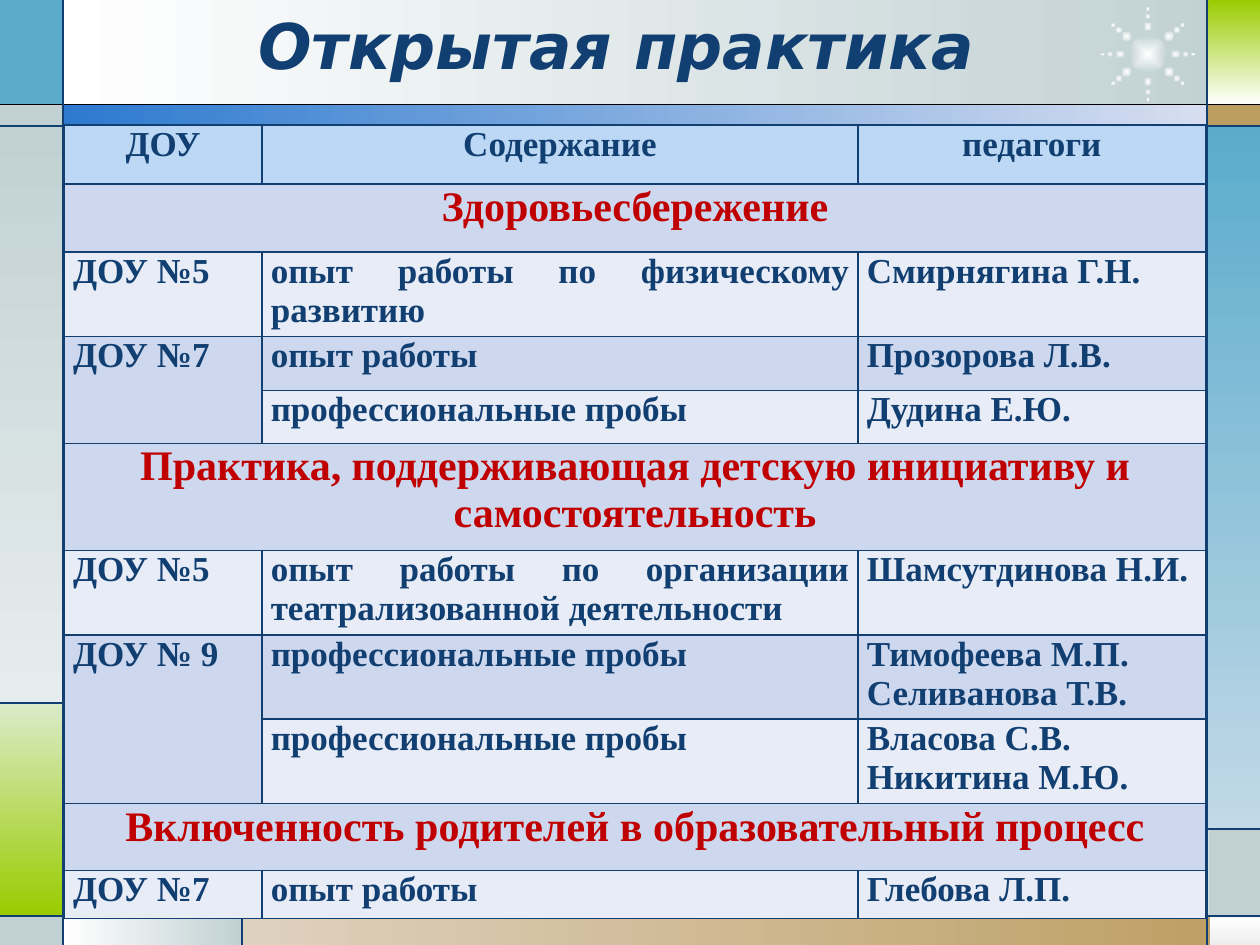
from dataclasses import dataclass
from math import cos, radians, sin
from typing import Optional

from lxml import etree
from pptx import Presentation
from pptx.dml.color import RGBColor
from pptx.enum.shapes import MSO_CONNECTOR, MSO_SHAPE
from pptx.enum.text import MSO_AUTO_SIZE, PP_ALIGN
from pptx.oxml import parse_xml
from pptx.oxml.ns import nsdecls, qn
from pptx.util import Inches, Pt


@dataclass(frozen=True)
class Theme:
    navy: str = "113F71"
    red: str = "C00000"
    black: str = "000000"
    white: str = "FFFFFF"
    mist: str = "C1D1D3"
    sky: str = "5AABCC"
    green: str = "99CC00"
    tan: str = "BD9E61"
    header: str = "BDD8F5"
    band_dark: str = "CDD7ED"
    band_light: str = "E8ECF6"
    title_font: str = "DejaVu Sans"
    body_font: str = "Times New Roman"
    title_size: int = 36
    section_size: int = 24
    body_size: int = 20


@dataclass(frozen=True)
class Panel:
    left: float
    top: float
    width: float
    height: float
    start: str
    end: Optional[str] = None
    angle: int = 0


@dataclass(frozen=True)
class Rule:
    x1: float
    y1: float
    x2: float
    y2: float
    color: str


THEME = Theme()
VERTICAL = 270

PANELS = [
    Panel(0.5, 0, 9.27, 0.84, THEME.white, THEME.mist),
    Panel(0, 0, 0.5, 0.84, THEME.sky),
    Panel(0, 0.83, 0.5, 0.17, THEME.mist),
    Panel(0, 1, 0.5, 4.58, THEME.mist, "E7EDEE", VERTICAL),
    Panel(0, 5.58, 0.5, 1.69, "DBEBC9", THEME.green, VERTICAL),
    Panel(0, 7.28, 0.5, 0.23, THEME.mist),
    Panel(0.5, 7.27, 1.43, 0.24, THEME.white, THEME.mist),
    Panel(1.92, 7.27, 8.08, 0.24, "DED1BF", THEME.tan),
    Panel(9.6, 7.28, 0.4, 0.23, THEME.white, "EDEDED", VERTICAL),
    Panel(9.59, 6.58, 0.41, 0.7, THEME.mist),
    Panel(9.58, 1, 0.42, 5.58, THEME.sky, "C2D9E7", VERTICAL),
    Panel(9.58, 0.83, 0.42, 0.17, THEME.tan),
    Panel(9.59, 0, 0.41, 0.83, THEME.green, THEME.white, VERTICAL),
    Panel(0.5, 0.83, 9.09, 0.17, "2D7ACF", "D7DEF0"),
]

RULES = [
    Rule(0, 0.83, 10, 0.83, THEME.black),
    Rule(0, 1, 10, 1, THEME.navy),
    Rule(0, 7.27, 10, 7.27, THEME.navy),
    Rule(0.5, 0, 0.5, 7.5, THEME.navy),
    Rule(9.58, 0, 9.58, 7.5, THEME.navy),
    Rule(0.5, 5.58, 0, 5.58, THEME.navy),
    Rule(1.92, 7.27, 1.92, 7.5, THEME.navy),
    Rule(9.58, 6.58, 10, 6.58, THEME.navy),
]

STAR_X, STAR_Y = 9.11, 0.43
RAY_ANGLES = (0, 40, 90, 140, 180, 220, 270, 320)
RAY_DOTS = ((0.3, 0.05, 0.05), (0.36, 0.04, 0.03), (0.22, 0.08, 0.07))

COLUMN_WIDTHS = (1.57, 4.73, 2.76)
ROW_HEIGHTS = (0.47, 0.54, 0.67, 0.43, 0.42, 0.85, 0.67, 0.67, 0.67, 0.53, 0.38)
PRACTICES = [
    ("ДОУ", "Содержание", "педагоги"),
    ("Здоровьесбережение",),
    ("ДОУ №5", "опыт работы по физическому развитию", "Смирнягина Г.Н."),
    ("ДОУ №7", "опыт работы", "Прозорова Л.В."),
    ("", "профессиональные пробы", "Дудина Е.Ю."),
    ("Практика, поддерживающая детскую инициативу и самостоятельность",),
    ("ДОУ №5", "опыт работы по организации театрализованной деятельности", "Шамсутдинова Н.И."),
    ("ДОУ № 9", "профессиональные пробы", "Тимофеева М.П.\nСеливанова Т.В."),
    ("", "профессиональные пробы", "Власова С.В.\nНикитина М.Ю."),
    ("Включенность родителей в образовательный процесс",),
    ("ДОУ №7", "опыт работы", "Глебова Л.П."),
]


def apply_format(target, values: dict) -> None:
    for name, value in values.items():
        setattr(target, name, value)


def paint(fill, start: str, end: Optional[str] = None, angle: int = 0) -> None:
    if end is None:
        fill.solid()
        fill.fore_color.rgb = RGBColor.from_string(start)
        return
    fill.gradient()
    fill.gradient_angle = angle
    for stop, color in zip(fill.gradient_stops, (start, end)):
        stop.color.rgb = RGBColor.from_string(color)


def draw_panel(slide, panel: Panel, kind=MSO_SHAPE.RECTANGLE):
    block = slide.shapes.add_shape(kind, Inches(panel.left), Inches(panel.top),
                                   Inches(panel.width), Inches(panel.height))
    block.shadow.inherit = False
    block.line.fill.background()
    paint(block.fill, panel.start, panel.end, panel.angle)
    return block


def draw_glow(slide, x: float, y: float, width: float, height: float, rotation: float) -> None:
    glow = draw_panel(slide, Panel(x - width / 2, y - height / 2, width, height,
                                   THEME.white, THEME.mist), MSO_SHAPE.OVAL)
    glow.rotation = rotation
    linear = next(glow.element.iter(qn("a:lin")))
    radial = parse_xml(f'<a:path {nsdecls("a")} path="shape">'
                       '<a:fillToRect l="50000" t="50000" r="50000" b="50000"/></a:path>')
    linear.getparent().replace(linear, radial)


def draw_star(slide) -> None:
    draw_glow(slide, STAR_X, STAR_Y, 0.3, 0.3, 2.5)
    for angle in RAY_ANGLES:
        for radius, length, thickness in RAY_DOTS:
            draw_glow(slide, STAR_X + radius * cos(radians(angle)),
                      STAR_Y + radius * sin(radians(angle)), length, thickness, angle)


def draw_rule(slide, rule: Rule) -> None:
    stroke = slide.shapes.add_connector(MSO_CONNECTOR.STRAIGHT, Inches(rule.x1), Inches(rule.y1),
                                        Inches(rule.x2), Inches(rule.y2))
    stroke.line.color.rgb = RGBColor.from_string(rule.color)
    stroke.line.width = Pt(0.75)
    etree.SubElement(stroke.element.spPr, qn("a:effectLst"))


def draw_title(slide) -> None:
    title = slide.shapes.add_textbox(Inches(1.95), Inches(0), Inches(7.81), Inches(0.71)).text_frame
    apply_format(title, {"text": "Открытая практика", "word_wrap": True,
                         "auto_size": MSO_AUTO_SIZE.SHAPE_TO_FIT_TEXT})
    font = title.paragraphs[0].runs[0].font
    apply_format(font, {"name": THEME.title_font, "size": Pt(THEME.title_size),
                        "bold": True, "italic": True})
    font.color.rgb = RGBColor.from_string(THEME.navy)


def style_cell(cell, fill: str) -> None:
    apply_format(cell, {"margin_left": Inches(0.07), "margin_right": Inches(0.07),
                        "margin_top": 0, "margin_bottom": 0})
    properties = cell._tc.get_or_add_tcPr()
    for side in ("lnL", "lnR", "lnT", "lnB"):
        properties.append(parse_xml(
            f'<a:{side} {nsdecls("a")} w="{Pt(1)}"><a:solidFill>'
            f'<a:srgbClr val="{THEME.navy}"/></a:solidFill></a:{side}>'))
    paint(cell.fill, fill)


def write_cell(cell, text: str, size: int, color: str, align) -> None:
    cell.text = text
    for paragraph in cell.text_frame.paragraphs:
        paragraph.alignment = align
        for run in paragraph.runs:
            apply_format(run.font, {"name": THEME.body_font, "size": Pt(size), "bold": True})
            run.font.color.rgb = RGBColor.from_string(color)


def draw_practices(slide) -> None:
    practices = slide.shapes.add_table(len(PRACTICES), len(COLUMN_WIDTHS), Inches(0.51), Inches(0.99),
                                       Inches(sum(COLUMN_WIDTHS)), Inches(sum(ROW_HEIGHTS))).table
    apply_format(practices, {"first_row": False, "horz_banding": False})
    for column, width in zip(practices.columns, COLUMN_WIDTHS):
        column.width = Inches(width)
    for index, (entries, height) in enumerate(zip(PRACTICES, ROW_HEIGHTS)):
        practices.rows[index].height = Inches(height)
        is_section = len(entries) == 1
        band = THEME.band_dark if index % 2 else THEME.band_light
        for column in range(len(COLUMN_WIDTHS)):
            style_cell(practices.cell(index, column), band if index else THEME.header)
        size, color = ((THEME.section_size, THEME.red) if is_section
                       else (THEME.body_size, THEME.navy))
        align = PP_ALIGN.CENTER if is_section or index == 0 else PP_ALIGN.JUSTIFY
        for column, text in enumerate(entries):
            if text:
                write_cell(practices.cell(index, column), text, size, color, align)
        if is_section:
            practices.cell(index, 0).merge(practices.cell(index, len(COLUMN_WIDTHS) - 1))
        elif not entries[0]:
            practices.cell(index - 1, 0).merge(practices.cell(index, 0))


def main() -> None:
    deck = Presentation()
    apply_format(deck, {"slide_width": Inches(10), "slide_height": Inches(7.5)})
    slide = deck.slides.add_slide(deck.slide_layouts[6])
    paint(slide.background.fill, THEME.white)
    for panel in PANELS:
        draw_panel(slide, panel)
    draw_star(slide)
    for rule in RULES:
        draw_rule(slide, rule)
    draw_title(slide)
    draw_practices(slide)
    deck.save("out.pptx")


if __name__ == "__main__":
    main()
